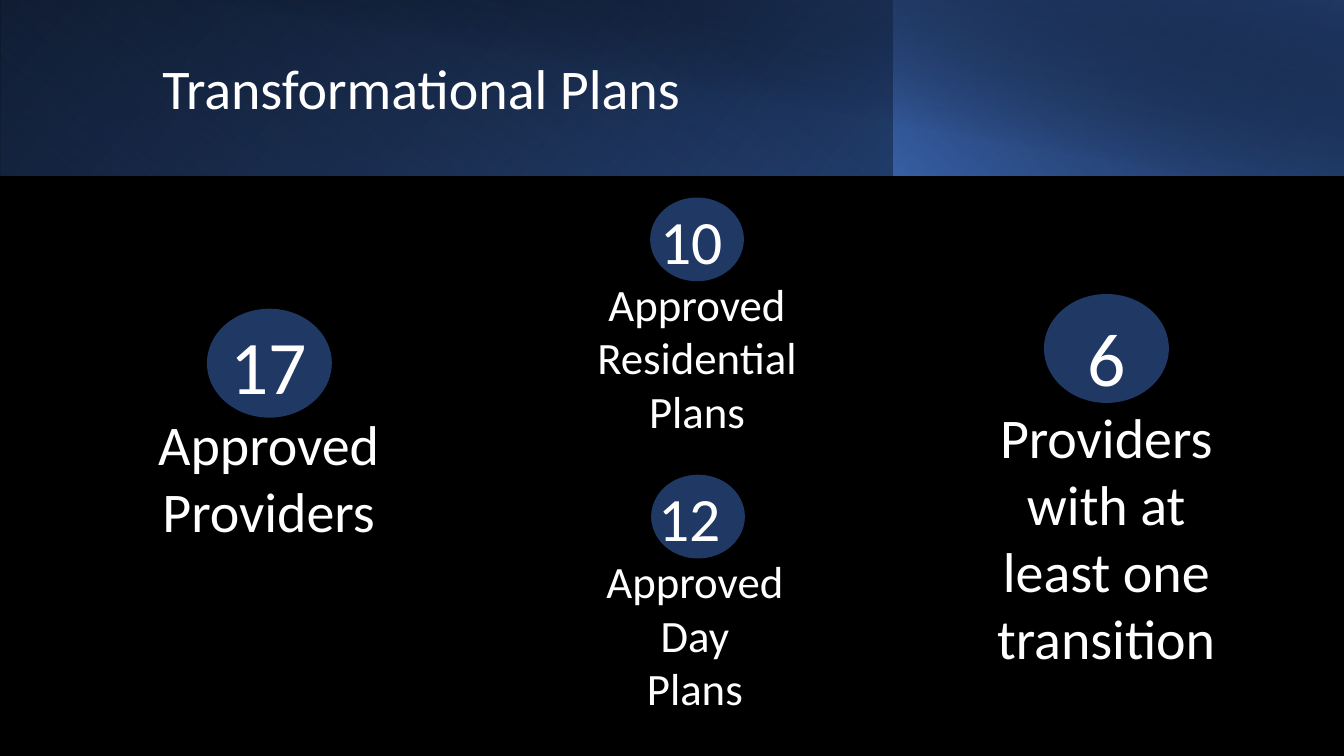
from dataclasses import dataclass

from pptx import Presentation
from pptx.dml.color import RGBColor
from pptx.enum.shapes import MSO_SHAPE as Shape
from pptx.enum.text import MSO_ANCHOR as Anchor, MSO_AUTO_SIZE as AutoSize, PP_ALIGN as Align
from pptx.oxml import parse_xml
from pptx.oxml.ns import nsdecls, qn
from pptx.util import Pt


@dataclass(frozen=True)
class Theme:
    font: str = "Calibri"
    white: str = "FFFFFF"
    black: str = "000000"
    navy: str = "203864"
    blue: str = "2F5597"
    bright: str = "4472C4"
    title: int = 40
    large: tuple = (54, 40)
    small: tuple = (44, 32)


theme = Theme()

TITLE = "Transformational Plans"
TITLE_FRAME = (108.7, 24.5, 779, 81.4)

BANDS = [
    {"frame": (0, 0, 960, 125.3), "flip": True, "turn": 0, "angle": 140,
     "stops": [(0, theme.black, 100), (100, theme.blue, 100)]},
    {"frame": (0, 0, 639.4, 125.3), "flip": True, "turn": 180, "angle": 230,
     "stops": [(20, theme.bright, 0), (100, theme.navy, 55)]},
    {"frame": (638.6, 0, 321.4, 125.3), "flip": True, "turn": 0, "angle": 220,
     "stops": [(0, theme.bright, 66), (100, theme.black, 30)]},
    {"frame": (36, 0, 924, 126), "flip": False, "turn": 0, "angle": 280,
     "stops": [(50, theme.black, 0), (99, theme.navy, 52)]},
]

LARGE_CIRCLE = (89.2, 77.8)
SMALL_CIRCLE = (67, 59.8)
TEXT_WIDTH = 212.4

CALLOUTS = [
    {"lines": [["17", " Approved Providers"]], "sizes": theme.large,
     "text_at": (85.7, 223.9), "height": 170,
     "circle_at": (147.8, 220.5), "circle": LARGE_CIRCLE},
    {"lines": [["6"], ["Providers with at least one transition"]], "sizes": theme.large,
     "text_at": (684, 218.9), "height": 266.4,
     "circle_at": (745.7, 210), "circle": LARGE_CIRCLE},
    {"lines": [["12", " "], ["Approved"], ["Day"], ["Plans"]], "sizes": theme.small,
     "text_at": (390.2, 339.1), "height": 177.1,
     "circle_at": (465.1, 339.1), "circle": SMALL_CIRCLE},
    {"lines": [["10", " "], ["Approved Residential"], ["Plans"]], "sizes": theme.small,
     "text_at": (391.7, 141.1), "height": 177.1,
     "circle_at": (464.4, 141.1), "circle": SMALL_CIRCLE},
]


def points(*values):
    return [Pt(value) for value in values]


def style(span, size):
    span.font.name = theme.font
    span.font.size = Pt(size)
    span.font.color.rgb = RGBColor.from_string(theme.white)


def add_plain_shape(page, kind, frame):
    shape = page.shapes.add_shape(kind, *points(*frame))
    shape.shadow.inherit = False
    shape.line.fill.background()
    return shape


def add_band(page, band):
    shape = add_plain_shape(page, Shape.RECTANGLE, band["frame"])
    shape.rotation = band["turn"]
    shape.fill.background()
    properties = shape._element.spPr
    if band["flip"]:
        properties.find(qn("a:xfrm")).set("flipH", "1")
    stops = "".join(
        f'<a:gs pos="{place * 1000}"><a:srgbClr val="{color}">'
        f'<a:alpha val="{opacity * 1000}"/></a:srgbClr></a:gs>'
        for place, color, opacity in band["stops"]
    )
    gradient = parse_xml(
        f'<a:gradFill {nsdecls("a")} rotWithShape="1"><a:gsLst>{stops}</a:gsLst>'
        f'<a:lin ang="{band["angle"] * 60000}" scaled="0"/></a:gradFill>'
    )
    properties.replace(properties.find(qn("a:noFill")), gradient)


def add_circle(page, callout):
    circle = add_plain_shape(page, Shape.OVAL, callout["circle_at"] + callout["circle"])
    circle.fill.solid()
    circle.fill.fore_color.rgb = RGBColor.from_string(theme.navy)


def add_callout(page, callout):
    frame = callout["text_at"] + (TEXT_WIDTH, callout["height"])
    text = page.shapes.add_textbox(*points(*frame)).text_frame
    text.word_wrap = True
    text.auto_size = AutoSize.SHAPE_TO_FIT_TEXT
    number_size, label_size = callout["sizes"]
    for row, parts in enumerate(callout["lines"]):
        para = text.add_paragraph() if row else text.paragraphs[0]
        para.alignment = Align.CENTER
        for column, part in enumerate(parts):
            span = para.add_run()
            span.text = part
            style(span, label_size if row or column else number_size)


def place_title(page):
    title = page.shapes.title
    title.left, title.top, title.width, title.height = points(*TITLE_FRAME)
    frame = title.text_frame
    frame.text = TITLE
    frame.word_wrap = True
    frame.auto_size = AutoSize.NONE
    frame.vertical_anchor = Anchor.MIDDLE
    para = frame.paragraphs[0]
    para.alignment = Align.LEFT
    para.line_spacing = 0.9
    style(para.runs[0], theme.title)
    title._element.getparent().append(title._element)


def main():
    deck = Presentation()
    deck.slide_width, deck.slide_height = points(960, 540)
    page = deck.slides.add_slide(deck.slide_layouts[5])
    page.background.fill.solid()
    page.background.fill.fore_color.rgb = RGBColor.from_string(theme.black)
    for callout in CALLOUTS:
        add_circle(page, callout)
    for band in BANDS:
        add_band(page, band)
    place_title(page)
    for callout in CALLOUTS:
        add_callout(page, callout)
    deck.save("out.pptx")


if __name__ == "__main__":
    main()
